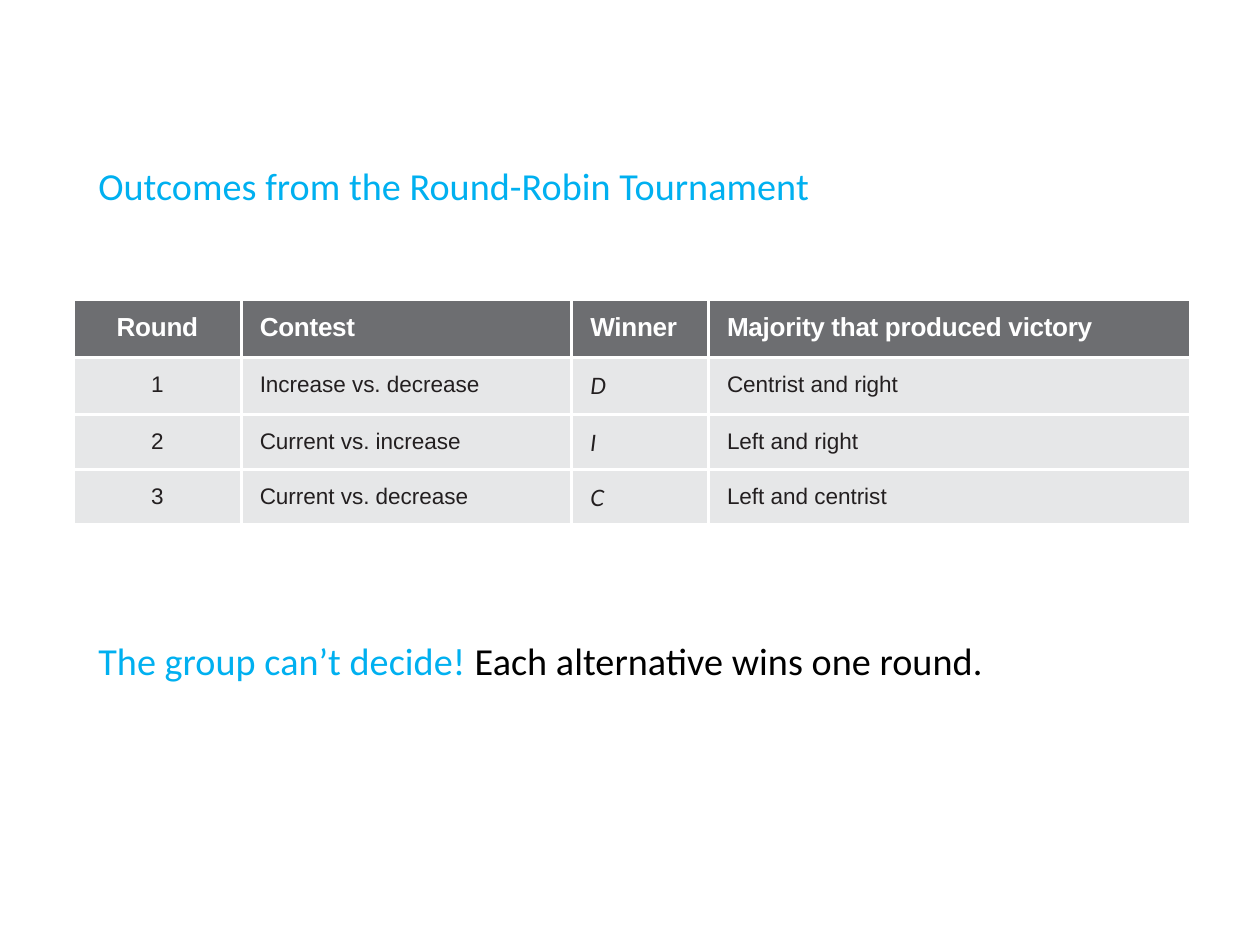
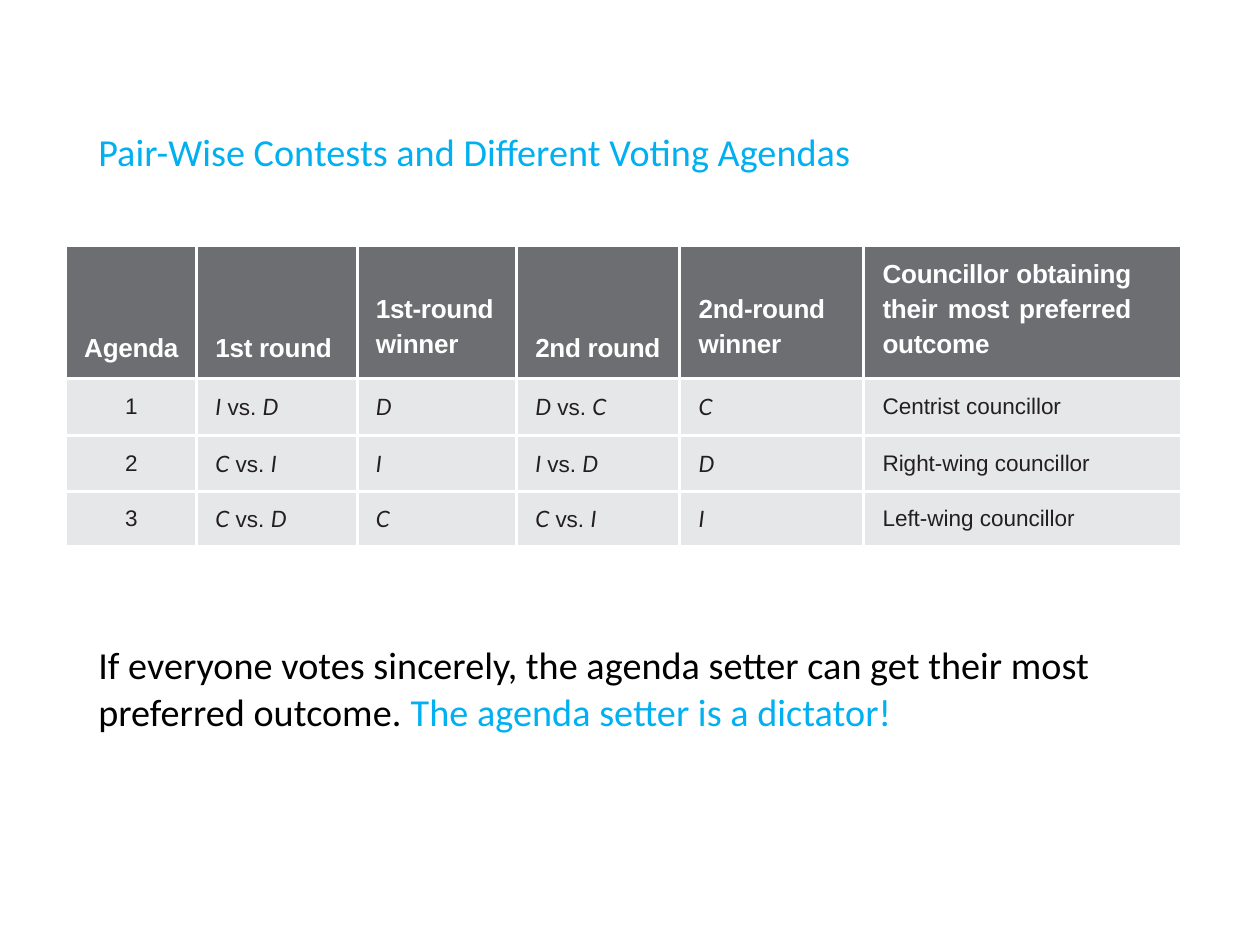
from lxml.etree import SubElement
from pptx import Presentation
from pptx.dml.color import RGBColor
from pptx.enum.text import MSO_ANCHOR, PP_ALIGN
from pptx.oxml.ns import qn
from pptx.util import Cm, Pt

# Colours
CYAN = RGBColor(0x00, 0xB0, 0xF0)
BLACK = RGBColor(0x00, 0x00, 0x00)
WHITE = RGBColor(0xFF, 0xFF, 0xFF)
SLATE = RGBColor(0x6D, 0x6E, 0x71)
PALE = RGBColor(0xE6, 0xE7, 0xE8)
INK = RGBColor(0x23, 0x1F, 0x20)


def write(para, text, font="Calibri", size=11, color=BLACK,
          bold=False, italic=False, track=0):
    """Add one run; track is letter spacing in hundredths of a point."""
    run = para.add_run()
    run.text = text
    face = run.font
    face.name, face.size = font, Pt(size)
    face.bold, face.italic = bold, italic
    face.color.rgb = color
    if track:
        run._r.get_or_add_rPr().set("spc", str(track))


def edge(cell, color=WHITE, width=1):
    """Draw a line on all four sides of a cell."""
    props = cell._tc.get_or_add_tcPr()
    for side in ("lnL", "lnR", "lnT", "lnB"):
        line = SubElement(props, qn(f"a:{side}"), w=str(Pt(width)))
        fill = SubElement(line, qn("a:solidFill"))
        SubElement(fill, qn("a:srgbClr"), val=str(color))


class Deck:
    left, width = Cm(1), Cm(10.4)
    pad = Cm(0.19)
    body = (0.58, 0.56, 0.56)

    def __init__(self):
        self.show = Presentation()
        # The page is set in whole and half points
        self.show.slide_width, self.show.slide_height = Pt(363), Pt(272.5)
        self.slide = None

    def page(self, title, top):
        self.slide = self.show.slides.add_slide(self.show.slide_layouts[6])
        self.text(top, 0.5, (title, CYAN))

    def text(self, top, height, *parts, line=1.0):
        box = self.slide.shapes.add_textbox(
            self.left, Cm(top), self.width, Cm(height))
        frame = box.text_frame
        frame.word_wrap = True
        frame.margin_left = frame.margin_right = 0
        frame.margin_top = frame.margin_bottom = 0
        para = frame.paragraphs[0]
        para.line_spacing = line
        for words, color in parts:
            write(para, words, color=color)

    def table(self, left, top, cols, head, rows):
        """Place a table; head is the height of its first row."""
        highs = (head, *self.body)
        grid = self.slide.shapes.add_table(
            len(rows), len(cols), Cm(left), Cm(top),
            Cm(sum(cols)), Cm(sum(highs))).table
        grid.horz_banding = False
        for col, wide in zip(grid.columns, cols):
            col.width = Cm(wide)
        for row, high, texts in zip(grid.rows, highs, rows):
            row.height = Cm(high)
            first = texts is rows[0]
            for num, (cell, text) in enumerate(zip(row.cells, texts)):
                self.cell(cell, text, first, num == 0)
        return grid

    def cell(self, cell, text, first, mid):
        edge(cell)
        cell.fill.solid()
        cell.fill.fore_color.rgb = SLATE if first else PALE
        cell.margin_left = 0 if mid else self.pad
        cell.margin_right = 0
        cell.margin_top = 0 if first else Cm(0.15)
        cell.margin_bottom = Cm(0.16) if first else 0
        cell.vertical_anchor = MSO_ANCHOR.BOTTOM if first else MSO_ANCHOR.TOP
        para = cell.text_frame.paragraphs[0]
        para.alignment = PP_ALIGN.CENTER if mid else PP_ALIGN.LEFT
        if first:
            para.line_spacing = 1.2
            write(para, text, font="Arial", size=7.5, color=WHITE,
                  bold=True, track=-10)
            return
        # Parts between stars are the names of the options
        for num, part in enumerate(text.split("*")):
            if part:
                name = num % 2 == 1
                write(para, part, font="Lato" if name else "Arial",
                      size=6.5, color=INK, italic=name)


def main():
    deck = Deck()

    # Round-robin results
    deck.page("Outcomes from the Round-Robin Tournament", 1.65)
    deck.table(0.75, 3.04, (1.7, 3.36, 1.39, 4.9), 0.59, [
        ("Round", "Contest", "Winner", "Majority that produced victory"),
        ("1", "Increase vs. decrease", "*D*", "Centrist and right"),
        ("2", "Current vs. increase", "*I*", "Left and right"),
        ("3", "Current vs. decrease", "*C*", "Left and centrist"),
    ])
    deck.text(6.48, 0.5, ("The group can’t decide! ", CYAN),
              ("Each alternative wins one round.", BLACK))

    # Voting agendas
    deck.page("Pair-Wise Contests and Different Voting Agendas", 1.3)
    grid = deck.table(0.67, 2.5, (1.33, 1.63, 1.62, 1.66, 1.87, 3.23), 1.35, [
        ("Agenda", "1st round", "1st-round winner", "2nd round",
         "2nd-round winner", "Councillor obtaining their most preferred outcome"),
        ("1", "*I* vs. *D*", "*D*", "*D* vs. *C*", "*C*", "Centrist councillor"),
        ("2", "*C* vs. *I*", "*I*", "*I* vs. *D*", "*D*", "Right-wing councillor"),
        ("3", "*C* vs. *D*", "*C*", "*C* vs. *I*", "*I*", "Left-wing councillor"),
    ])
    # Headings of several lines sit a little higher
    for col in (2, 4, 5):
        grid.cell(0, col).margin_bottom = Cm(0.2)
    last = grid.cell(0, 5)
    last.margin_right = Cm(0.52)
    last.text_frame.paragraphs[0].alignment = PP_ALIGN.JUSTIFY
    deck.text(6.5, 0.97,
              ("If everyone votes sincerely, the agenda setter can get "
               "their most preferred outcome. ", BLACK),
              ("The agenda setter is a dictator!", CYAN), line=1.03)

    deck.show.save("out.pptx")


if __name__ == "__main__":
    main()
